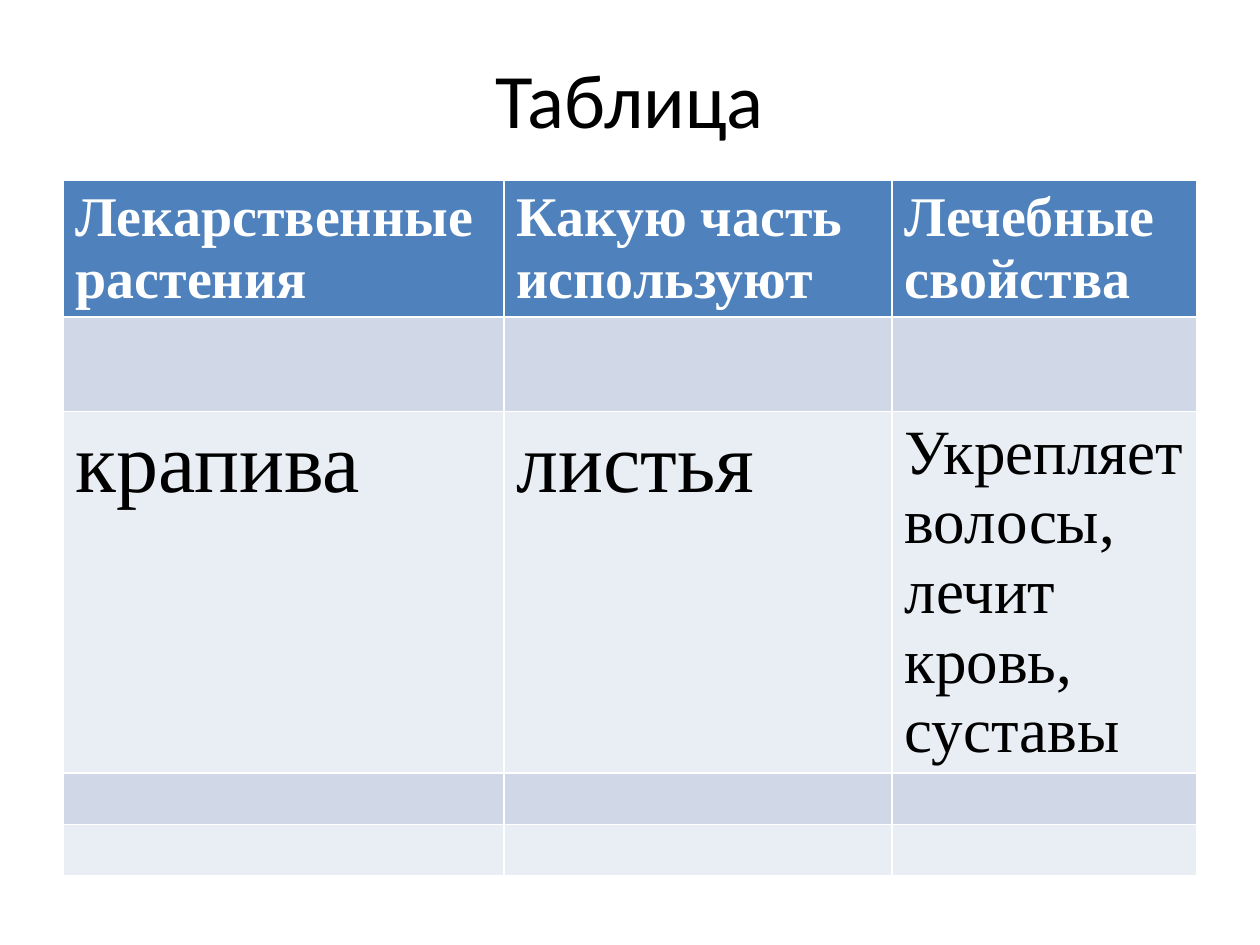
from pptx import Presentation
from pptx.dml.color import RGBColor
from pptx.enum import text
from pptx.util import Inches, Pt

TITLE = "Таблица"
HEADINGS = ["Лекарственные растения", "Какую часть используют", "Лечебные свойства"]
NETTLE = ["крапива", "листья", "Укрепляет волосы, лечит кровь, суставы"]
EMPTY = [""] * 3
ROWS = [HEADINGS, EMPTY, NETTLE, EMPTY, EMPTY]
HEADING_SIZES = [32, 32, 32]
NETTLE_SIZES = [48, 48, 36]
COLUMN_WIDTHS = [3.5, 3.08, 2.42]
ROW_HEIGHTS = [1.08, 0.75, 2.86, 0.41, 0.41]
HEADER_FILL, BANDS = "4F81BD", ["E9EDF4", "D0D8E8"]


def color(value):
    return RGBColor.from_string(value)


def style(paragraph, size, face, ink, bold=False):
    for run in paragraph.runs:
        run.font.size = Pt(size)
        run.font.name = face
        run.font.bold = bold
        run.font.color.rgb = color(ink)


def add_title(slide):
    title = slide.shapes.title
    title.left, title.top = Inches(0.5), Inches(0.3)
    title.width, title.height = Inches(9), Inches(0.95)
    title.text_frame.text = TITLE
    title.text_frame.vertical_anchor = text.MSO_ANCHOR.MIDDLE
    heading = title.text_frame.paragraphs[0]
    heading.alignment = text.PP_ALIGN.CENTER
    style(heading, 44, "Calibri", "000000")


def add_plants(slide):
    plants = slide.shapes.add_table(
        len(ROWS), len(HEADINGS), Inches(0.5), Inches(1.43),
        Inches(sum(COLUMN_WIDTHS)), Inches(sum(ROW_HEIGHTS))).table
    for column, width in zip(plants.columns, COLUMN_WIDTHS):
        column.width = Inches(width)
    for r, (words, height) in enumerate(zip(ROWS, ROW_HEIGHTS)):
        plants.rows[r].height = Inches(height)
        header = r == 0
        sizes = HEADING_SIZES if header else NETTLE_SIZES
        for c, (word, size) in enumerate(zip(words, sizes)):
            cell = plants.cell(r, c)
            cell.fill.solid()
            cell.fill.fore_color.rgb = color(HEADER_FILL if header else BANDS[r % 2])
            if word:
                cell.text_frame.text = word
                style(cell.text_frame.paragraphs[0], size, "Times New Roman",
                      "FFFFFF" if header else "000000", header)


def main():
    deck = Presentation()
    deck.slide_width, deck.slide_height = Inches(10), Inches(7.5)
    slide = deck.slides.add_slide(deck.slide_layouts[5])
    add_title(slide)
    add_plants(slide)
    deck.save("out.pptx")


if __name__ == "__main__":
    main()
